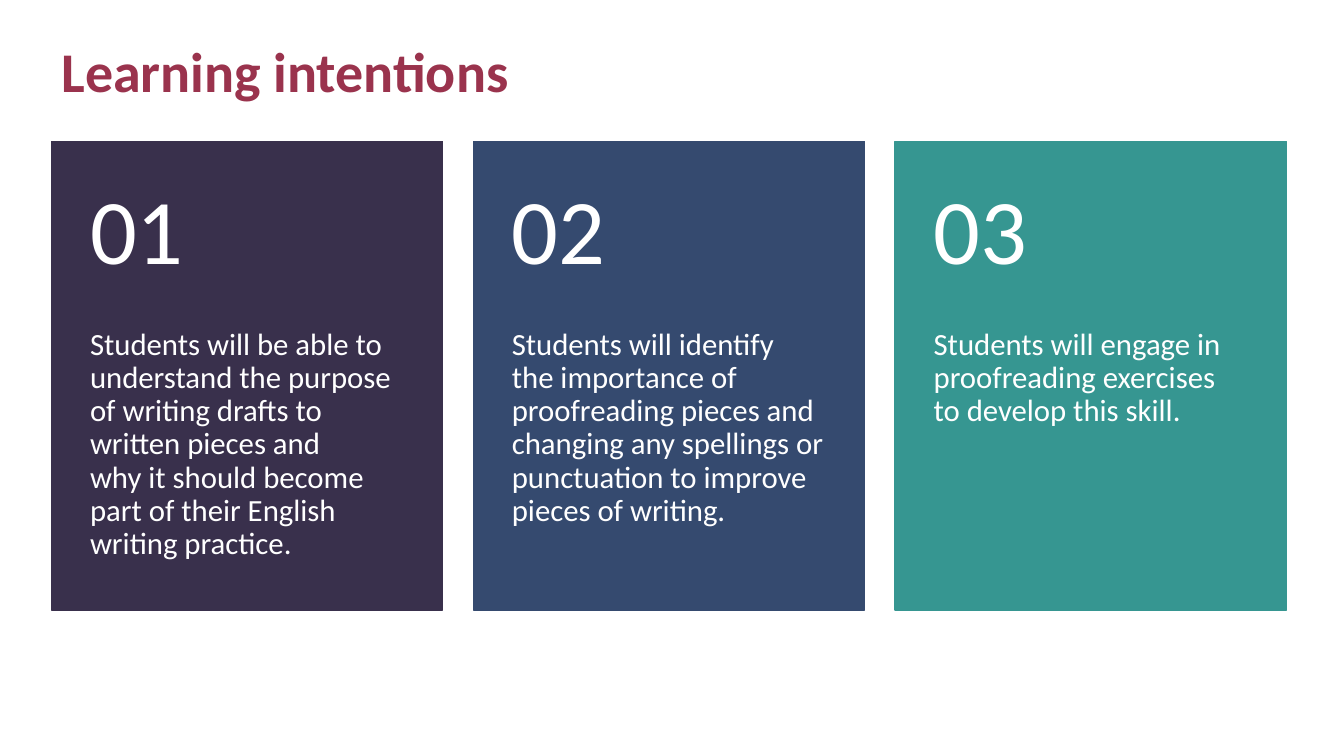
"""Build the "Learning intentions" slide with three numbered cards."""
from pptx import Presentation
from pptx.dml.color import RGBColor
from pptx.enum.shapes import MSO_SHAPE as SHAPE
from pptx.enum.text import MSO_ANCHOR as ANCHOR, MSO_AUTO_SIZE as AUTO, PP_ALIGN as ALIGN
from pptx.util import Cm, Pt


def rgb(value):
    return RGBColor.from_string(value)


def write(sp, text, size=22, color="FFFFFF", bold=False, anchor=ANCHOR.TOP,
          margins=(0.25, 0.13, 0.25, 0.13)):
    tf = sp.text_frame
    tf.word_wrap = True
    tf.auto_size = AUTO.NONE
    tf.vertical_anchor = anchor
    tf.margin_left, tf.margin_top, tf.margin_right, tf.margin_bottom = map(Cm, margins)
    p = tf.paragraphs[0]
    p.text = text
    p.alignment = ALIGN.LEFT
    p.line_spacing = 0.9
    for r in p.runs:
        r.font.name = "Calibri"
        r.font.size = Pt(size)
        r.font.bold = bold
        r.font.color.rgb = rgb(color)


prs = Presentation()
prs.slide_width, prs.slide_height = Cm(33.87), Cm(19.05)
s = prs.slides.add_slide(prs.slide_layouts[5])

title = s.shapes.title
title.left, title.top, title.width, title.height = Cm(1.3), Cm(1.02), Cm(29.21), Cm(1.73)
write(title, "Learning intentions", size=40, color="9A334D", bold=True, anchor=ANCHOR.MIDDLE)

cards = [
    ("39304C", "Students will be able to understand the purpose of writing drafts to "
               "written pieces and \nwhy it should become part of their English writing practice."),
    ("354A6F", "Students will identify \nthe importance of proofreading pieces and "
               "changing any spellings or punctuation to improve pieces of writing."),
    ("369691", "Students will engage in proofreading exercises to develop this skill."),
]
left, top, width, height = 1.3, 3.56, 9.86, 11.81
pitch = 10.63
number_height = 4.72

for i, (color, intention) in enumerate(cards):
    x = Cm(left + i * pitch)
    card = s.shapes.add_shape(SHAPE.RECTANGLE, x, Cm(top), Cm(width), Cm(height))
    card.shadow.inherit = False
    card.fill.solid()
    card.fill.fore_color.rgb = rgb(color)
    card.line.color.rgb = rgb(color)
    card.line.width = Pt(1)

    body = s.shapes.add_textbox(x, Cm(top + number_height), Cm(width), Cm(height - number_height))
    write(body, intention, margins=(0.97, 0, 0.97, 0.91))

    number = s.shapes.add_textbox(x, Cm(top), Cm(width), Cm(number_height))
    write(number, f"{i + 1:02}", size=66, anchor=ANCHOR.MIDDLE, margins=(0.97, 0.46, 0.97, 0.46))

prs.save("out.pptx")
